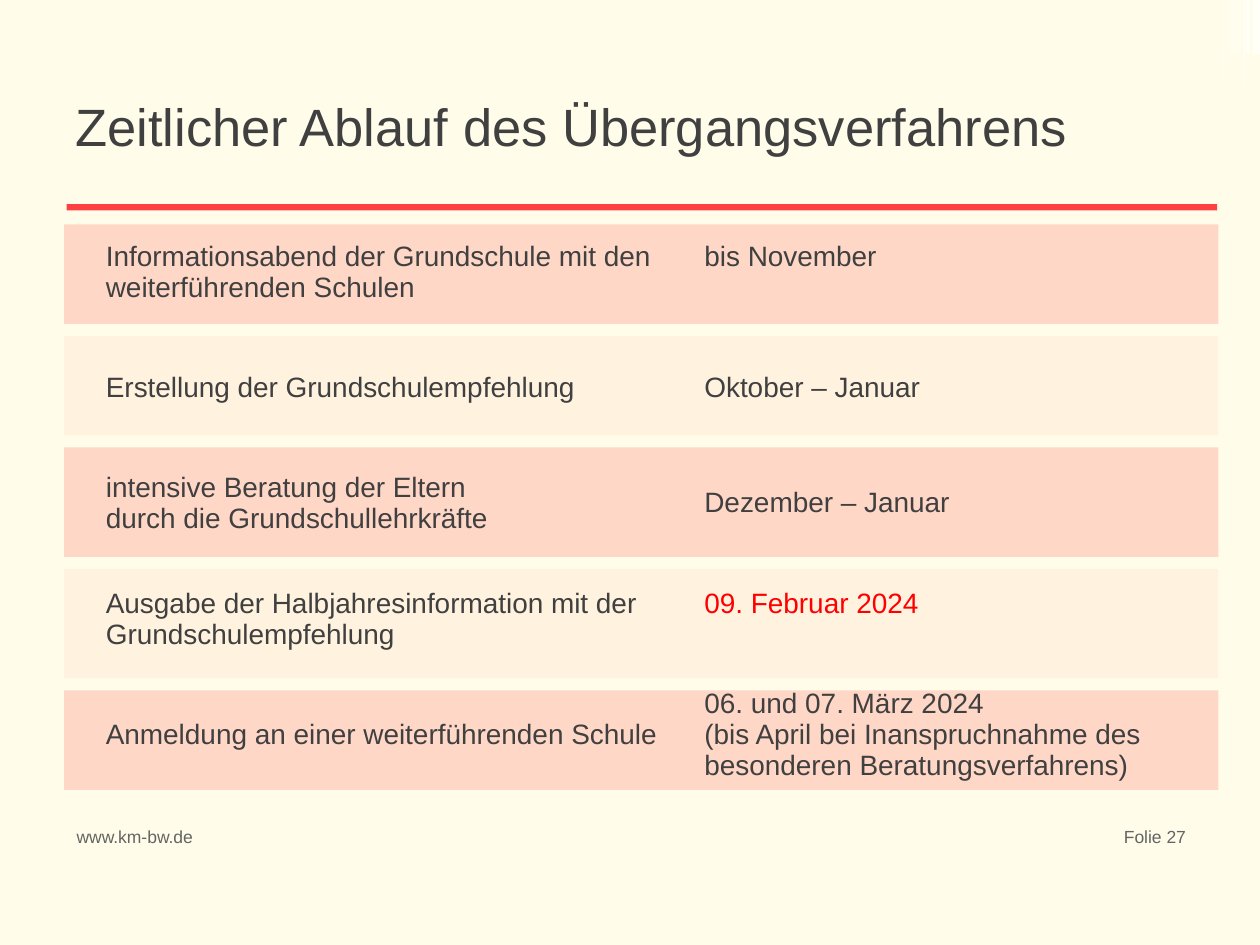
from pptx import Presentation
from pptx.dml.color import RGBColor as RGB
from pptx.enum.shapes import MSO_SHAPE as Shape
from pptx.enum.text import MSO_ANCHOR as Anchor, PP_ALIGN as Align
from pptx.oxml.ns import qn
from pptx.util import Inches, Pt
from lxml.etree import SubElement as Sub

COLORS = {
    "page": "FFFDE9", "white": "FFFFFF", "rule": "FF4040", "pale": "FF7F7F",
    "text": "404040", "foot": "646464", "alert": "FF0000",
}


class Deck:
    font = "Arial"

    def __init__(self, wide, high):
        self.prs = Presentation()
        self.prs.slide_width, self.prs.slide_height = Inches(wide), Inches(high)
        self.slide = self.prs.slides.add_slide(self.prs.slide_layouts[6])
        self.paint(self.slide.background.fill, "page")

    def paint(self, fill, color, alpha=100):
        fill.solid()
        fill.fore_color.rgb = RGB.from_string(COLORS[color])
        if alpha < 100:
            node = fill._xPr.find(qn("a:solidFill"))[0]
            Sub(node, qn("a:alpha"), val=str(alpha * 1000))

    def style(self, frame, size, color, align=Align.LEFT):
        for para in frame.paragraphs:
            para.alignment = align
            for run in para.runs:
                run.font.name, run.font.size = self.font, Pt(size)
                run.font.color.rgb = RGB.from_string(COLORS[color])

    def rect(self, x, y, w, h, color, alpha=100):
        box = self.slide.shapes.add_shape(
            Shape.RECTANGLE, Inches(x), Inches(y), Inches(w), Inches(h))
        box.shadow.inherit = False
        box.line.fill.background()
        self.paint(box.fill, color, alpha)

    def text(self, x, y, w, h, words, size, color,
             align=Align.LEFT, anchor=Anchor.TOP):
        box = self.slide.shapes.add_textbox(
            Inches(x), Inches(y), Inches(w), Inches(h))
        frame = box.text_frame
        frame.word_wrap = True
        frame.vertical_anchor = anchor
        frame.text = words
        self.style(frame, size, color, align)

    def cell(self, cell, words, color="text", lift=0):
        for side in ("lnL", "lnR", "lnT", "lnB"):
            Sub(Sub(cell._tc.get_or_add_tcPr(), qn("a:" + side), w="0"),
                qn("a:noFill"))
        cell.fill.background()
        cell.vertical_anchor = Anchor.MIDDLE
        cell.margin_bottom = Inches(0.05 + 2 * lift)
        cell.text_frame.text = words
        self.style(cell.text_frame, 16, color)

    def table(self, x, y, cols, high, rows):
        grid = self.slide.shapes.add_table(
            len(rows), len(cols), Inches(x), Inches(y),
            Inches(sum(cols)), Inches(high)).table
        grid.first_row = grid.horz_banding = False
        for col, wide in zip(grid.columns, cols):
            col.width = Inches(wide)
        for r, (step, date) in enumerate(rows):
            self.cell(grid.cell(r, 0), step)
            self.cell(grid.cell(r, 1), **date)


def main():
    deck = Deck(10, 7.5)

    # Faint stripes in the top right corner
    stripes = [(9.89, 0.03, 0.43, 65), (9.94, 0.06, 0.43, 65),
               (9.7, 0.01, 0.64, 30), (9.87, 0.01, 0.68, 60),
               (9.75, 0.06, 0.43, 20), (9.82, 0.03, 0.43, 40)]
    for x, w, h, alpha in stripes:
        deck.rect(x, 0, w, h, "white", alpha)

    # Bands behind the rows, spread evenly from top to bottom
    top, bottom = 1.78, 6.27
    highs = [0.79, 0.79, 0.87, 0.87, 0.79]
    gap = (bottom - top - sum(highs)) / (len(highs) - 1)
    for i, high in enumerate(highs):
        color, alpha = ("pale", 8) if i % 2 else ("rule", 20)
        deck.rect(0.51, top, 9.16, high, color, alpha)
        top += high + gap

    # Schedule: step and date; lifted dates sit level with the first line
    lift = 0.12
    rows = [
        ("Informationsabend der Grundschule mit den weiterführenden Schulen",
         dict(words="bis November", lift=lift)),
        ("Erstellung der Grundschulempfehlung",
         dict(words="Oktober – Januar")),
        ("intensive Beratung der Eltern\ndurch die Grundschullehrkräfte",
         dict(words="Dezember – Januar")),
        ("Ausgabe der Halbjahresinformation mit der Grundschulempfehlung",
         dict(words="09. Februar 2024", color="alert", lift=lift)),
        ("Anmeldung an einer weiterführenden Schule",
         dict(words="06. und 07. März 2024\n(bis April bei Inanspruchnahme "
                    "des besonderen Beratungsverfahrens)")),
    ]
    deck.table(0.74, 1.7, [4.75, 3.99], 4.59, rows)

    # Footer
    deck.text(0.51, 6.51, 1.33, 0.39, "www.km-bw.de", 10, "foot")
    deck.text(8.54, 6.51, 0.97, 0.39, "Folie 27", 10, "foot", Align.RIGHT)

    # Title and rule
    deck.text(0.5, 0.61, 9, 0.77, "Zeitlicher Ablauf des Übergangsverfahrens",
              30, "text", anchor=Anchor.MIDDLE)
    deck.rect(0.53, 1.62, 9.13, 0.05, "rule")

    deck.prs.save("out.pptx")


if __name__ == "__main__":
    main()
